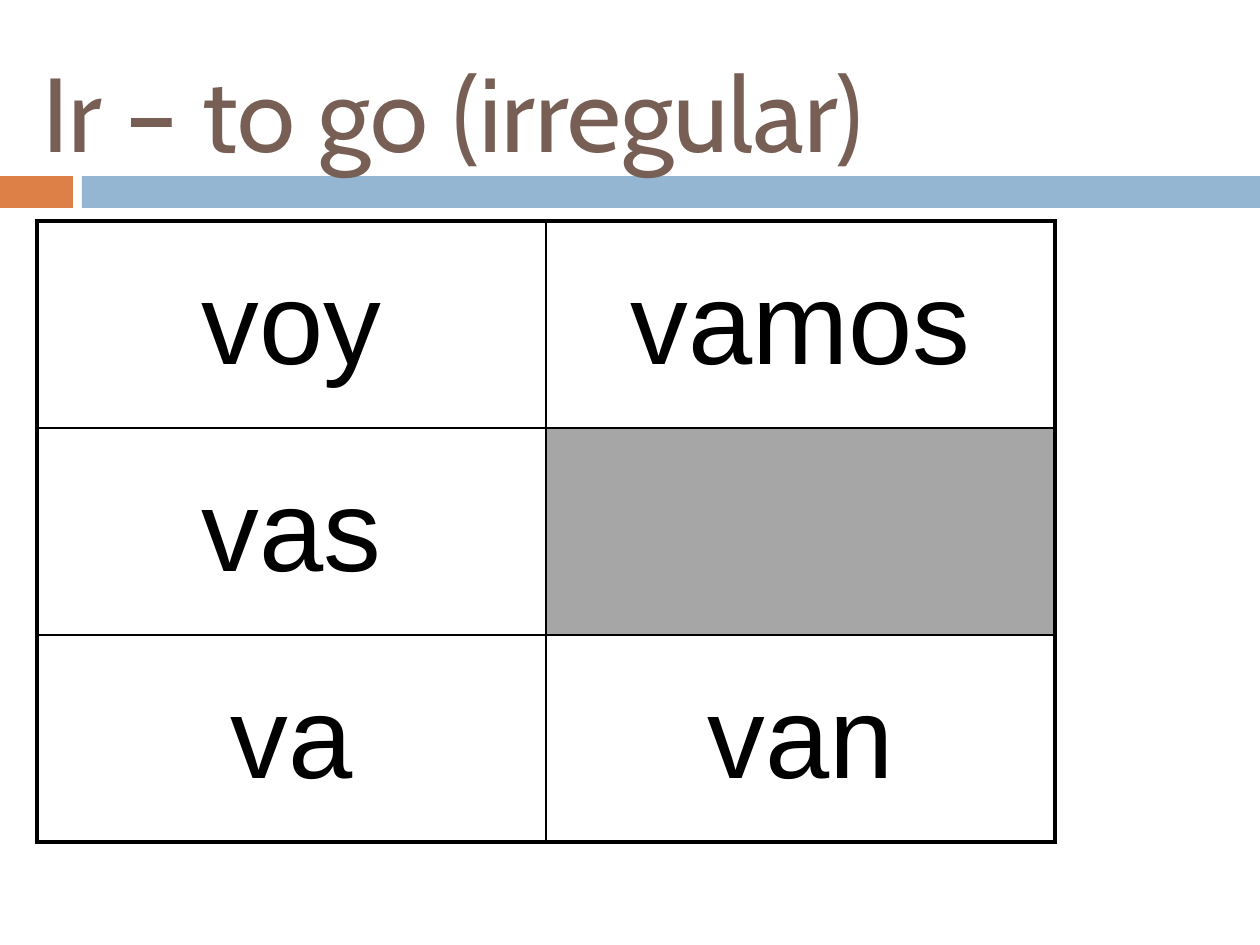
"""Build a slide with the present-tense forms of the Spanish verb ir."""
import pptx
import pptx.util
import pptx.dml.color
import pptx.enum.shapes
import pptx.enum.text
import pptx.oxml
import pptx.oxml.ns

SCALE = 914400 / 126
COLORS = {"title": "775F55", "orange": "DD8047", "blue": "94B6D2",
          "black": "000000", "white": "FFFFFF", "gray": "A6A6A6"}
ALIGN = pptx.enum.text.PP_ALIGN
MIDDLE = pptx.enum.text.MSO_ANCHOR.MIDDLE


def px(*sizes):
    return [pptx.util.Emu(round(size * SCALE)) for size in sizes]


def write(frame, text, font="Arial", size=66, color="black", align=ALIGN.CENTER):
    par = frame.paragraphs[0]
    par.alignment = align
    run = par.add_run()
    run.text = text
    run.font.name = font
    run.font.size = pptx.util.Pt(size)
    run.font.color.rgb = pptx.dml.color.RGBColor.from_string(COLORS[color])


deck = pptx.Presentation()
deck.slide_width, deck.slide_height = px(1260, 945)
slide = deck.slides.add_slide(deck.slide_layouts[5])

title = slide.shapes.title
title.left, title.top, title.width, title.height = px(30, 32, 1031, 158)
title.text_frame.word_wrap = True
title.text_frame.auto_size = pptx.enum.text.MSO_AUTO_SIZE.NONE
title.text_frame.vertical_anchor = MIDDLE
write(title.text_frame, "Ir – to go (irregular)", font="Cabin", size=60,
      color="title", align=ALIGN.LEFT)

for left, width, color in [(0, 73, "orange"), (82, 1178, "blue")]:
    bar = slide.shapes.add_shape(pptx.enum.shapes.MSO_SHAPE.RECTANGLE,
                                 *px(left, 176, width, 32))
    bar.shadow.inherit = False
    bar.fill.solid()
    bar.fill.fore_color.rgb = pptx.dml.color.RGBColor.from_string(COLORS[color])
    bar.line.fill.background()
    slide.shapes._spTree.remove(bar._element)
    title._element.addprevious(bar._element)

forms = [["voy", "vamos"], ["vas", ""], ["va", "van"]]
rows, cols = len(forms), len(forms[0])
table = slide.shapes.add_table(rows, cols, *px(37, 221, 1018, 620)).table
table.first_row = table.horz_banding = False
for col in table.columns:
    col.width = px(509)[0]
for row in table.rows:
    row.height = px(207)[0]

for r, row in enumerate(forms):
    for c, verb in enumerate(row):
        cell = table.cell(r, c)
        cell.vertical_anchor = MIDDLE
        if verb:
            write(cell.text_frame, verb)
        props = cell._tc.get_or_add_tcPr()
        outer = {"lnL": c == 0, "lnR": c == cols - 1,
                 "lnT": r == 0, "lnB": r == rows - 1}
        for side, edge in outer.items():
            width = pptx.util.Pt(2.25 if edge else 1)
            props.append(pptx.oxml.parse_xml(
                f'<a:{side} {pptx.oxml.ns.nsdecls("a")} w="{width}"><a:solidFill>'
                f'<a:srgbClr val="{COLORS["black"]}"/></a:solidFill></a:{side}>'))
        cell.fill.solid()
        cell.fill.fore_color.rgb = pptx.dml.color.RGBColor.from_string(
            COLORS["white" if verb else "gray"])

deck.save("out.pptx")
